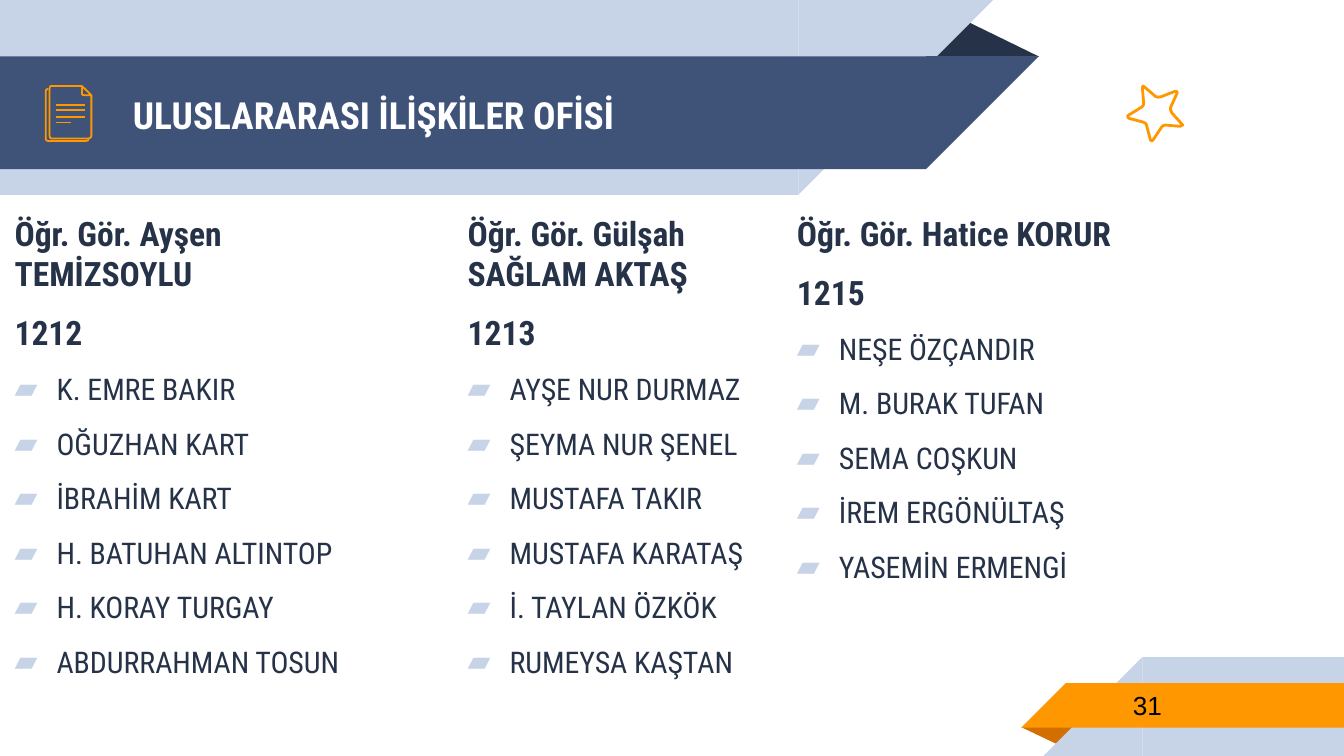
"""Build the slide listing the international office staff in three columns."""
from lxml.etree import SubElement
from pptx import Presentation
from pptx.dml.color import RGBColor
from pptx.enum.shapes import MSO_CONNECTOR, MSO_SHAPE
from pptx.enum.text import MSO_ANCHOR
from pptx.oxml.ns import qn
from pptx.util import Pt

NAVY = RGBColor(0x26, 0x32, 0x48)
BLUE = RGBColor(0x3F, 0x53, 0x78)
PALE = RGBColor(0xC7, 0xD3, 0xE6)
ORANGE = RGBColor(0xFF, 0x98, 0x00)
RUST = RGBColor(0xD2, 0x6F, 0x00)
WHITE = RGBColor(0xFF, 0xFF, 0xFF)
BLACK = RGBColor(0x00, 0x00, 0x00)

FONT = "Roboto Condensed"
TITLE = {"name": FONT, "size": Pt(20), "bold": True, "color": WHITE}
HEADING = {"name": FONT, "size": Pt(18), "bold": True, "color": NAVY}
MEMBER = {"name": FONT, "size": Pt(16), "bold": False, "color": NAVY}
NUMBER = {"name": "Arial", "size": Pt(14), "bold": False, "color": BLACK}

COLUMNS = [
    ((0.7, 106.6, 195, 290), ["Öğr. Gör. Ayşen TEMİZSOYLU", "1212"],
     ["K. EMRE BAKIR", "OĞUZHAN KART", "İBRAHİM KART",
      "H. BATUHAN ALTINTOP", "H. KORAY TURGAY", "ABDURRAHMAN TOSUN"]),
    ((243.4, 106.6, 176.4, 298), ["Öğr. Gör. Gülşah SAĞLAM AKTAŞ", "1213"],
     ["AYŞE NUR DURMAZ", "ŞEYMA NUR ŞENEL", "MUSTAFA TAKIR",
      "MUSTAFA KARATAŞ", "İ. TAYLAN ÖZKÖK", "RUMEYSA KAŞTAN"]),
    ((419.8, 106.6, 187.9, 265.7), ["Öğr. Gör. Hatice KORUR", "1215"],
     ["NEŞE ÖZÇANDIR", "M. BURAK TUFAN", "SEMA COŞKUN",
      "İREM ERGÖNÜLTAŞ", "YASEMİN ERMENGİ"]),
]

FOLDS_AND_BANDS = [
    ("fold", (495.4, 10.1, 61.2, 20.2), NAVY, 0),
    ("top band", (0, 0, 427.7, 104.4), PALE),
    ("top band", (0, 30.2, 496.1, 60.5), BLUE),
    ("fold", (547.2, 389.6, 31, 10), RUST, 180),
    ("bottom band", (612, 352.1, 108, 52.9), PALE),
    ("bottom band", (571, 366, 149, 23.8), ORANGE),
]

BACK_PAGE = [(47.5, 74.2), (47.2, 75.2), (46.1, 75.6), (25.9, 75.6), (24.8, 75.2),
             (24.5, 74.2), (24.5, 49), (24.8, 48), (25.9, 47.5)]
FRONT_PAGE = [(49, 51.1), (49, 72.7), (48.7, 73.7), (47.5, 74.2), (27.4, 74.2),
              (26.8, 73.7), (26.6, 72.7), (26.6, 47.5), (26.8, 46.4), (27.4, 46.1),
              (43.9, 46.1)]
PAGE_CORNER = [(43.9, 50.4), (43.9, 46.1), (49, 51.1), (45.4, 51.1), (44.3, 50.9)]
STAR = [(629.3, 49), (630.4, 49), (630.7, 49.7), (627.1, 57.6), (627.1, 59),
        (627.8, 60.5), (632.9, 66.2), (633.6, 67), (632.2, 67.7), (624.2, 67),
        (622.8, 67.5), (622.1, 68.4), (617.8, 74.9), (617, 75.6), (616.3, 74.9),
        (614.2, 67), (613.8, 66.2), (612.7, 65.5), (604.8, 63.4), (604.1, 62.6),
        (604.3, 61.9), (611.3, 57.6), (612.4, 56.7), (612.7, 55.4), (612, 46.8),
        (612.4, 46.1), (613, 46.5), (619.2, 51.8), (620.6, 52.1), (622.1, 51.8)]
OUTLINES = [(BACK_PAGE, False, 0.96), (FRONT_PAGE, False, 0.96),
            (PAGE_CORNER, True, 0.96), (STAR, True, 1.5)]
PAGE_LINES = [(45.4, 56.1), (45.4, 59.1), (45.4, 62.5), (38.2, 65.6)]
PAGE_LINE_LEFT = 30.2


def add_filled(slide, kind, box, color):
    shape = slide.shapes.add_shape(kind, *map(Pt, box))
    shape.shadow.inherit = False
    shape.fill.solid()
    shape.fill.fore_color.rgb = color
    shape.line.fill.background()
    return shape


def add_fold(slide, box, color, rotation):
    fold = add_filled(slide, MSO_SHAPE.ISOSCELES_TRIANGLE, box, color)
    fold.adjustments[0] = 0.324
    fold.rotation = rotation


def add_band(slide, box, color, at_top):
    left, top, width, height = box
    add_filled(slide, MSO_SHAPE.RECTANGLE, box, color)
    slant_left = left + width if at_top else left - height
    slant = add_filled(slide, MSO_SHAPE.RIGHT_TRIANGLE, (slant_left, top, height, height), color)
    slant._element.spPr.xfrm.set("flipV" if at_top else "flipH", "1")


def add_outline(slide, points, closed, weight):
    corners = [(Pt(x), Pt(y)) for x, y in points]
    builder = slide.shapes.build_freeform(*corners[0])
    builder.add_line_segments(corners[1:], close=closed)
    outline = builder.convert_to_shape()
    outline.shadow.inherit = False
    outline.fill.background()
    outline.line.color.rgb = ORANGE
    outline.line.width = Pt(weight)


def add_page_line(slide, right, y):
    line = slide.shapes.add_connector(
        MSO_CONNECTOR.STRAIGHT, Pt(PAGE_LINE_LEFT), Pt(y), Pt(right), Pt(y))
    line.line.color.rgb = ORANGE
    line.line.width = Pt(0.96)
    SubElement(line._element.spPr, qn("a:effectLst"))


def add_bullet(paragraph):
    properties = paragraph._p.get_or_add_pPr()
    properties.set("marL", str(Pt(22.5)))
    properties.set("indent", str(-Pt(22.5)))
    color = SubElement(SubElement(properties, qn("a:buClr")), qn("a:srgbClr"))
    color.set("val", str(PALE))
    SubElement(properties, qn("a:buFont")).set("typeface", FONT)
    SubElement(properties, qn("a:buChar")).set("char", "▰")


def add_text(slide, box, lines, anchor=MSO_ANCHOR.TOP, space_after=0):
    frame = slide.shapes.add_textbox(*map(Pt, box)).text_frame
    frame.word_wrap = True
    frame.vertical_anchor = anchor
    for side in ("left", "top", "right", "bottom"):
        setattr(frame, f"margin_{side}", Pt(7.2))
    for index, (text, style) in enumerate(lines):
        paragraph = frame.add_paragraph() if index else frame.paragraphs[0]
        paragraph.space_after = Pt(space_after)
        if style is MEMBER:
            add_bullet(paragraph)
        run = paragraph.add_run()
        run.text = text
        for name, value in style.items():
            if name == "color":
                run.font.color.rgb = value
            else:
                setattr(run.font, name, value)


def main():
    presentation = Presentation()
    presentation.slide_width, presentation.slide_height = Pt(720), Pt(405)
    slide = presentation.slides.add_slide(presentation.slide_layouts[6])
    for kind, box, color, *rotation in FOLDS_AND_BANDS:
        if kind == "fold":
            add_fold(slide, box, color, *rotation)
        else:
            add_band(slide, box, color, kind == "top band")
    add_text(slide, (64.1, 31, 414, 60.5), [("ULUSLARARASI İLİŞKİLER OFİSİ", TITLE)],
             MSO_ANCHOR.MIDDLE)
    for box, headings, members in COLUMNS:
        lines = [(text, HEADING) for text in headings] + [(text, MEMBER) for text in members]
        add_text(slide, box, lines, space_after=10)
    add_text(slide, (599.8, 365, 117.4, 25.2), [("31", NUMBER)], MSO_ANCHOR.MIDDLE)
    for points, closed, weight in OUTLINES:
        add_outline(slide, points, closed, weight)
    for right, y in PAGE_LINES:
        add_page_line(slide, right, y)
    presentation.save("out.pptx")


if __name__ == "__main__":
    main()
